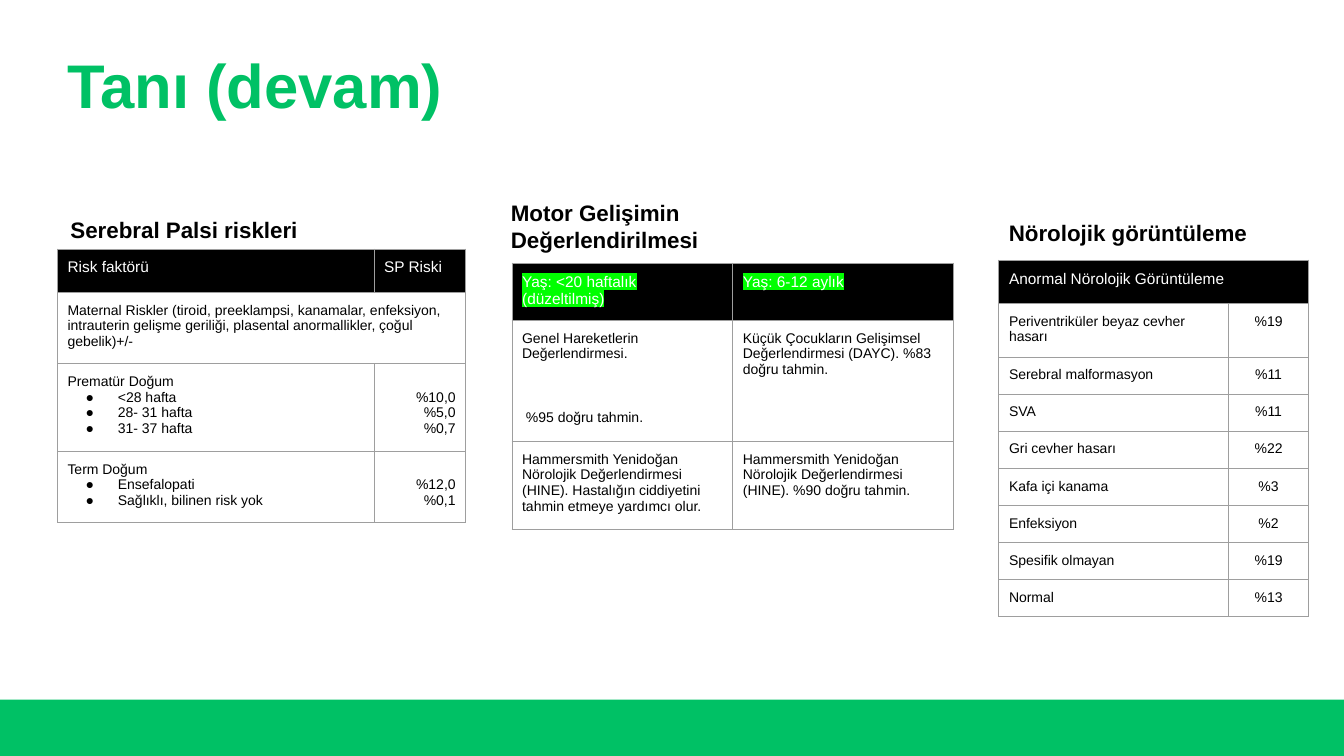
from lxml import etree
from pptx import Presentation
from pptx import util as u
from pptx.dml.color import RGBColor
from pptx.enum import shapes, text
from pptx.oxml.ns import qn

COLORS = {"green": "00C165", "black": "000000", "white": "FFFFFF",
          "border": "9E9E9E", "highlight": "00FF00"}
UNIT = u.Inches(0.1)  # one grid step; the slide is 133.33 columns by 75 rows
COLS, ROWS = 133.33, 75
LINE = 1.55  # height of one 10 pt text line, in grid rows
ALIGN = {"l": text.PP_ALIGN.LEFT, "c": text.PP_ALIGN.CENTER,
         "r": text.PP_ALIGN.RIGHT}

TITLE = {"size": u.Pt(44), "bold": True, "name": "Arial"}
HEADING = {"size": u.Pt(16), "bold": True, "name": "Arial"}
HEADER = {"size": u.Pt(11), "bold": False, "name": "Arial"}
BODY = {"size": u.Pt(10), "bold": False, "name": "Arial"}

RISKS = [
    ["Risk faktörü", "SP Riski"],
    ["Maternal Riskler (tiroid, preeklampsi, kanamalar, enfeksiyon, intrauterin "
     "gelişme geriliği, plasental anormallikler, çoğul gebelik)+/-", ""],
    [["Prematür Doğum", "<28 hafta", "28- 31 hafta", "31- 37 hafta"],
     ["%10,0", "%5,0", "%0,7"]],
    [["Term Doğum", "Ensefalopati", "Sağlıklı, bilinen risk yok"],
     ["%12,0", "%0,1"]],
]
MOTOR = [
    ["Yaş: <20 haftalık (düzeltilmiş)", "Yaş: 6-12 aylık"],
    [["Genel Hareketlerin Değerlendirmesi. ", " %95 doğru tahmin."],
     "Küçük Çocukların Gelişimsel Değerlendirmesi (DAYC). %83 doğru tahmin."],
    ["Hammersmith Yenidoğan Nörolojik Değerlendirmesi (HINE). Hastalığın "
     "ciddiyetini tahmin etmeye yardımcı olur.",
     "Hammersmith Yenidoğan Nörolojik Değerlendirmesi (HINE). %90 doğru tahmin."],
]
IMAGING = [
    ["Anormal Nörolojik Görüntüleme", ""],
    ["Periventriküler beyaz cevher hasarı", "%19"],
    ["Serebral malformasyon", "%11"],
    ["SVA", "%11"],
    ["Gri cevher hasarı", "%22"],
    ["Kafa içi kanama", "%3"],
    ["Enfeksiyon", "%2"],
    ["Spesifik olmayan", "%19"],
    ["Normal", "%13"],
]


def grid(*steps):
    return [int(step * UNIT) for step in steps]


def rgb(color):
    return RGBColor.from_string(COLORS[color])


def add_color(parent, tag, color):
    """Append a colour-holding element, such as solidFill, to parent."""
    el = etree.SubElement(parent, qn(tag))
    etree.SubElement(el, qn("a:srgbClr"), val=COLORS[color])
    return el


def write(p, words, style, color):
    r = p.add_run()
    r.text = words
    for name, value in style.items():
        setattr(r.font, name, value)
    r.font.color.rgb = rgb(color)
    return r


def add_text(slide, words, box, style, color="black", spacing=None):
    tf = slide.shapes.add_textbox(*grid(*box)).text_frame
    tf.word_wrap = True
    p = tf.paragraphs[0]
    p.line_spacing = spacing
    write(p, words, style, color)


def add_band(slide, box, color):
    sp = slide.shapes.add_shape(shapes.MSO_SHAPE.RECTANGLE, *grid(*box))
    sp.shadow.inherit = False
    sp.fill.solid()
    sp.fill.fore_color.rgb = rgb(color)
    sp.line.fill.background()


def add_bullet(p):
    pPr = p._p.get_or_add_pPr()
    pPr.set("marL", str(u.Inches(0.5)))
    pPr.set("indent", str(u.Inches(-0.32)))
    add_color(pPr, "a:buClr", "black")
    etree.SubElement(pPr, qn("a:buFont"), typeface="Arial")
    etree.SubElement(pPr, qn("a:buChar"), char="●")


def highlight(r):
    holder = etree.Element("holder")
    mark = add_color(holder, "a:highlight", "highlight")
    r._r.rPr.find(qn("a:solidFill")).addnext(mark)


def add_borders(cell):
    tcPr = cell._tc.get_or_add_tcPr()
    for i, side in enumerate("LRTB"):
        ln = etree.Element(qn("a:ln" + side), w=str(u.Pt(0.75)))
        add_color(ln, "a:solidFill", "border")
        tcPr.insert(i, ln)


def fill_cell(cell, content, header, align):
    cell.fill.solid()
    cell.fill.fore_color.rgb = rgb("black" if header else "white")
    add_borders(cell)
    for side in ("left", "right", "top", "bottom"):
        setattr(cell, "margin_" + side, UNIT)
    lines = content if isinstance(content, list) else [content]
    tf = cell.text_frame
    for i, line in enumerate(lines):
        p = tf.add_paragraph() if i else tf.paragraphs[0]
        p.alignment = ALIGN[align]
        if line:
            write(p, line, HEADER if header else BODY,
                  "white" if header else "black")


def add_table(slide, rows, corner, widths, heights, aligns="ll", merged=()):
    """Add a two-column table with a black header; merged rows span both columns."""
    box = grid(*corner, sum(widths), sum(heights))
    table = slide.shapes.add_table(len(rows), len(widths), *box).table
    table.horz_banding = table.first_row = False
    for column, width in zip(table.columns, grid(*widths)):
        column.width = width
    for row, height in zip(table.rows, grid(*heights)):
        row.height = height
    for i, row in enumerate(rows):
        for j, content in enumerate(row):
            fill_cell(table.cell(i, j), content, i == 0,
                      aligns[j] if i else "l")
    for i in merged:
        table.cell(i, 0).merge(table.cell(i, 1))
    return table


def add_risks(slide):
    add_text(slide, "Serebral Palsi riskleri", (6, 21, 39.9, 3.7), HEADING)
    table = add_table(slide, RISKS, (5.7, 24.7), (31.4, 9.1),
                      (4.3, 7.1, 8.7, 7), "lr", merged=[1])
    for i in (2, 3):
        for p in table.cell(i, 0).text_frame.paragraphs[1:]:
            add_bullet(p)
        # values start level with the first bulleted line
        table.cell(i, 1).margin_top = int((1 + LINE) * UNIT)


def add_motor(slide):
    add_text(slide, "Motor Gelişimin Değerlendirilmesi",
             (49.7, 19.3, 36.3, 6.4), HEADING)
    table = add_table(slide, MOTOR, (50.8, 26.1), (21.9, 21.9), (5.7, 12, 8.7))
    for j in range(2):
        highlight(table.cell(0, j).text_frame.paragraphs[0].runs[0])
    estimate = table.cell(1, 0).text_frame.paragraphs[1]
    estimate.space_before = u.Pt(34)


def add_imaging(slide):
    add_text(slide, "Nörolojik görüntüleme", (99.1, 21.2, 26.6, 3.7), HEADING)
    add_table(slide, IMAGING, (99.1, 25.8), (22.8, 7.9),
              [4.3, 5.3] + [3.67] * 7, "lc", merged=[0])


def main():
    prs = Presentation()
    prs.slide_width, prs.slide_height = grid(COLS, ROWS)
    slide = prs.slides.add_slide(prs.slide_layouts[6])
    add_band(slide, (0, 69.4, COLS, 5.6), "green")
    add_text(slide, "Tanı (devam)", (5.7, 5, 54.7, 7.8), TITLE, "green", 0.9)
    add_risks(slide)
    add_motor(slide)
    add_imaging(slide)
    prs.save("out.pptx")


if __name__ == "__main__":
    main()
